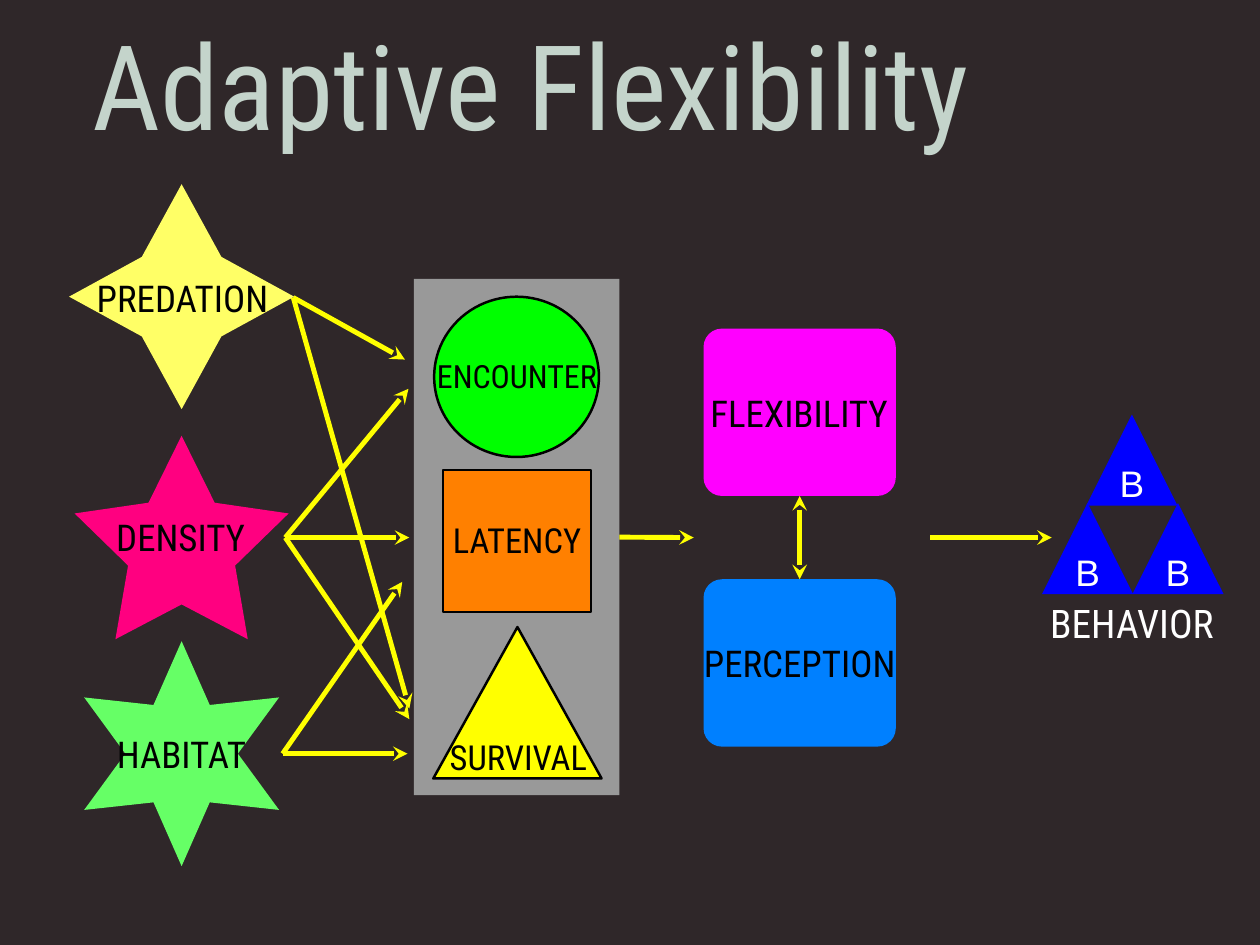
from dataclasses import dataclass
from math import cos, pi, sin

from lxml.etree import SubElement
from pptx import Presentation
from pptx.dml.color import RGBColor
from pptx.enum.shapes import MSO_CONNECTOR, MSO_SHAPE
from pptx.enum.text import MSO_ANCHOR, MSO_AUTO_SIZE, PP_ALIGN
from pptx.oxml.ns import qn
from pptx.util import Inches, Pt


@dataclass(frozen=True)
class Theme:
    font: str = "Roboto Condensed"
    letter_font: str = "Arial"
    background: str = "2F2729"
    title: str = "C4D4CB"
    dark: str = "000000"
    light: str = "FFFFFF"
    arrow: str = "FFFF00"
    predation: str = "FFFF66"
    density: str = "FF0080"
    habitat: str = "66FF66"
    panel: str = "999999"
    encounter: str = "00FF00"
    latency: str = "FF8000"
    survival: str = "FFFF00"
    flexibility: str = "FF00FF"
    perception: str = "0080FF"
    behavior: str = "0000FF"
    title_size: int = 96
    behavior_size: int = 32
    label_size: int = 30
    middle_size: int = 28
    small_size: int = 26
    outline_width: int = 2
    arrow_width: int = 4


THEME = Theme()
TOP, BOTTOM, RIGHT = 0, 2, 3


def rgb(color):
    return RGBColor.from_string(color)


def write(holder, text, size=THEME.label_size, color=THEME.dark, font=THEME.font,
          align=PP_ALIGN.CENTER, wrap=True):
    frame = holder.text_frame
    frame.auto_size = MSO_AUTO_SIZE.NONE
    frame.word_wrap = wrap
    frame.vertical_anchor = MSO_ANCHOR.MIDDLE
    frame.margin_left = frame.margin_top = frame.margin_right = frame.margin_bottom = 0
    paragraph = frame.paragraphs[0]
    paragraph.alignment = align
    run = paragraph.add_run()
    run.text = text
    run.font.size = Pt(size)
    run.font.name = font
    run.font.color.rgb = rgb(color)


def add_label(slide, text, left, top, width, height, **text_format):
    box = slide.shapes.add_textbox(Inches(left), Inches(top), Inches(width), Inches(height))
    write(box, text, wrap=False, **text_format)


def paint(shape, fill, outline=None):
    shape.shadow.inherit = False
    shape.fill.solid()
    shape.fill.fore_color.rgb = rgb(fill)
    if outline:
        shape.line.color.rgb = rgb(outline)
        shape.line.width = Pt(THEME.outline_width)
    else:
        shape.line.fill.background()
    return shape


def add_preset(slide, preset, left, top, width, height, fill, outline=None):
    shape = slide.shapes.add_shape(
        preset, Inches(left), Inches(top), Inches(width), Inches(height))
    return paint(shape, fill, outline)


def add_star(slide, points, center_x, center_y, radius, fill):
    """Star whose inner corners lie at half the outer radius."""
    corners = []
    for i in range(2 * points):
        reach = radius / 2 if i % 2 else radius
        angle = i * pi / points
        corners.append((Inches(center_x + reach * sin(angle)),
                        Inches(center_y - reach * cos(angle))))
    builder = slide.shapes.build_freeform(*corners[0])
    builder.add_line_segments(corners[1:], close=True)
    paint(builder.convert_to_shape(), fill)


def add_arrow(slide, start, end, from_side=None, to_side=None, ends=("tailEnd",)):
    """Arrow from start to end; sides are (shape, site) pairs to join."""
    arrow = slide.shapes.add_connector(
        MSO_CONNECTOR.STRAIGHT, *(Inches(value) for value in (*start, *end)))
    if from_side:
        arrow.begin_connect(*from_side)
    if to_side:
        arrow.end_connect(*to_side)
    arrow.line.color.rgb = rgb(THEME.arrow)
    arrow.line.width = Pt(THEME.arrow_width)
    properties = arrow._element.spPr
    for end_name in ends:
        SubElement(properties.find(qn("a:ln")), qn(f"a:{end_name}"), type="stealth")
    SubElement(properties, qn("a:effectLst"))


def add_title(slide):
    title = slide.shapes.title
    title.left, title.top = Inches(1.04), Inches(0.1)
    title.width, title.height = Inches(12.12), Inches(1.68)
    write(title, "Adaptive Flexibility", size=THEME.title_size, color=THEME.title,
          align=PP_ALIGN.LEFT)


def add_factors(slide):
    center_x, radius = 2.05, 1.27
    star = add_preset(slide, MSO_SHAPE.STAR_4_POINT, center_x - radius, 2.08,
                      2 * radius, 2 * radius, THEME.predation)
    star.adjustments[0] = 0.25
    add_star(slide, 5, center_x, 6.19, radius, THEME.density)
    add_star(slide, 6, center_x, 8.51, radius, THEME.habitat)
    add_label(slide, "PREDATION", 1.06, 3.06, 2, 0.61)
    add_label(slide, "DENSITY", 1.27, 5.76, 1.54, 0.61)
    add_label(slide, "HABITAT", 1.3, 8.21, 1.5, 0.61)


def add_mechanisms(slide):
    panel = add_preset(slide, MSO_SHAPE.RECTANGLE, 4.67, 3.15, 2.32, 5.83, THEME.panel)
    add_preset(slide, MSO_SHAPE.OVAL, 4.9, 3.35, 1.86, 1.81, THEME.encounter, THEME.dark)
    add_preset(slide, MSO_SHAPE.RECTANGLE, 5, 5.31, 1.67, 1.6, THEME.latency, THEME.dark)
    add_preset(slide, MSO_SHAPE.ISOSCELES_TRIANGLE, 4.89, 7.08, 1.9, 1.71,
               THEME.survival, THEME.dark)
    add_label(slide, "ENCOUNTER", 4.91, 3.97, 1.85, 0.54, size=THEME.small_size)
    add_label(slide, "LATENCY", 5.08, 5.81, 1.51, 0.57, size=THEME.middle_size)
    add_label(slide, "SURVIVAL", 5.03, 8.26, 1.64, 0.57, size=THEME.middle_size)
    return panel


def add_process(slide, text, top, fill, label_left, label_width):
    box = add_preset(slide, MSO_SHAPE.ROUNDED_RECTANGLE, 7.94, top, 2.17, 1.89, fill)
    box.adjustments[0] = 0.11
    add_label(slide, text, label_left, top + 0.64, label_width, 0.61)
    return box


def add_behavior(slide):
    side = 1.03
    for left, top in ((12.26, 4.68), (11.76, 5.68), (12.78, 5.68)):
        triangle = add_preset(slide, MSO_SHAPE.ISOSCELES_TRIANGLE, left, top, side, side,
                              THEME.behavior)
        write(triangle, "B", color=THEME.light, font=THEME.letter_font)
    add_label(slide, "BEHAVIOR", 11.82, 6.71, 1.91, 0.64,
              size=THEME.behavior_size, color=THEME.light)


def add_arrows(slide, panel, flexibility, perception):
    # Factors to mechanisms
    targets = {
        (3.31, 3.36): ((4.57, 4.06), (4.62, 8)),
        (3.22, 6.07): ((4.61, 4.39), (4.62, 6.07), (4.62, 8.12)),
        (3.19, 8.51): ((4.54, 6.57), (4.6, 8.51)),
    }
    for factor_tip, mechanisms in targets.items():
        for mechanism in mechanisms:
            add_arrow(slide, factor_tip, mechanism)

    # Mechanisms to processes to behavior
    add_arrow(slide, (6.99, 6.06), (7.83, 6.07), from_side=(panel, RIGHT))
    add_arrow(slide, (9.02, 5.6), (9.02, 6.54), from_side=(flexibility, BOTTOM),
              to_side=(perception, TOP), ends=("headEnd", "tailEnd"))
    add_arrow(slide, (10.5, 6.07), (11.87, 6.07))


def main():
    deck = Presentation()
    deck.slide_width, deck.slide_height = Inches(14.22), Inches(10.67)
    slide = deck.slides.add_slide(deck.slide_layouts[5])
    slide.background.fill.solid()
    slide.background.fill.fore_color.rgb = rgb(THEME.background)

    add_title(slide)
    add_behavior(slide)
    flexibility = add_process(slide, "FLEXIBILITY", 3.71, THEME.flexibility, 7.97, 2.1)
    perception = add_process(slide, "PERCEPTION", 6.54, THEME.perception, 7.93, 2.19)
    add_factors(slide)
    panel = add_mechanisms(slide)
    add_arrows(slide, panel, flexibility, perception)
    deck.save("out.pptx")


if __name__ == "__main__":
    main()
